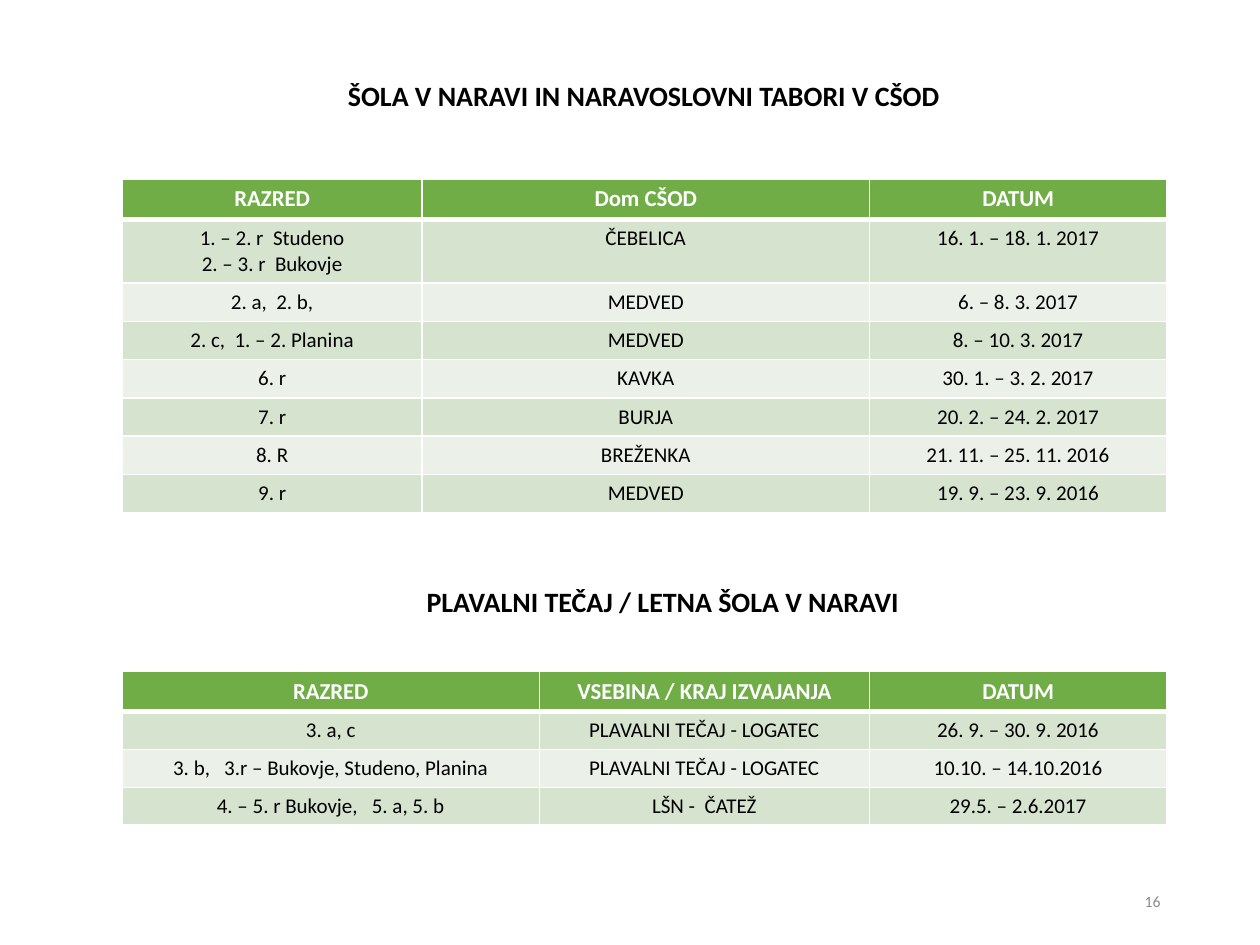
from dataclasses import dataclass

from lxml import etree
from pptx import Presentation
from pptx.dml.color import RGBColor
from pptx.enum.text import MSO_ANCHOR, PP_ALIGN
from pptx.oxml.ns import qn
from pptx.util import Inches, Pt

CENTER, RIGHT = PP_ALIGN.CENTER, PP_ALIGN.RIGHT
TOP, MIDDLE = MSO_ANCHOR.TOP, MSO_ANCHOR.MIDDLE

BLACK = RGBColor(0x00, 0x00, 0x00)
WHITE = RGBColor(0xFF, 0xFF, 0xFF)
GRAY = RGBColor(0x8C, 0x8C, 0x8C)
GREEN = RGBColor(0x70, 0xAD, 0x47)
BANDS = (RGBColor(0xD5, 0xE3, 0xCF), RGBColor(0xEB, 0xF1, 0xE9))

FONT = "Calibri"
TABLE_LEFT = 0.97
LINE_HEIGHT = 0.2
CELL_PADDING = 0.1
THIN, THICK = 1, 3


@dataclass(frozen=True)
class Schedule:
    top: float
    columns: tuple[float, ...]
    header: tuple[str, ...]
    rows: tuple[tuple[str, ...], ...]


CAMPS = Schedule(
    top=1.42,
    columns=(2.38, 3.55, 2.36),
    header=("RAZRED", "Dom CŠOD", "DATUM"),
    rows=(
        ("1. – 2. r  Studeno\n2. – 3. r  Bukovje", "ČEBELICA", "16. 1. – 18. 1. 2017"),
        ("2. a,  2. b,", "MEDVED", "6. – 8. 3. 2017"),
        ("2. c,  1. – 2. Planina", "MEDVED", "8. – 10. 3. 2017"),
        ("6. r", "KAVKA", "30. 1. – 3. 2. 2017"),
        ("7. r", "BURJA", "20. 2. – 24. 2. 2017"),
        ("8. R", "BREŽENKA", "21. 11. – 25. 11. 2016"),
        ("9. r", "MEDVED", "19. 9. – 23. 9. 2016"),
    ),
)

SWIMMING = Schedule(
    top=5.33,
    columns=(3.31, 2.62, 2.36),
    header=("RAZRED", "VSEBINA / KRAJ IZVAJANJA", "DATUM"),
    rows=(
        ("3. a, c", "PLAVALNI TEČAJ - LOGATEC", "26. 9. – 30. 9. 2016"),
        ("3. b,   3.r – Bukovje, Studeno, Planina", "PLAVALNI TEČAJ - LOGATEC", "10.10. – 14.10.2016"),
        ("4. – 5. r Bukovje,   5. a, 5. b", "LŠN -  ČATEŽ", "29.5. – 2.6.2017"),
    ),
)


def write_text(frame, text: str, *, size: float, color: RGBColor = BLACK, bold: bool = False,
               align=CENTER, anchor=None, spacing: float | None = None) -> None:
    frame.word_wrap = True
    if anchor is not None:
        frame.vertical_anchor = anchor
    frame.text = text
    for paragraph in frame.paragraphs:
        paragraph.alignment = align
        paragraph.line_spacing = spacing
        for run in paragraph.runs:
            run.font.name = FONT
            run.font.size = Pt(size)
            run.font.bold = bold
            run.font.color.rgb = color


def place(shape, left: float, top: float, width: float, height: float) -> None:
    shape.left, shape.top = Inches(left), Inches(top)
    shape.width, shape.height = Inches(width), Inches(height)


def add_border(cell, side: str, width: float) -> None:
    properties = cell._tc.get_or_add_tcPr()
    line = etree.SubElement(properties, qn(f"a:ln{side}"), w=str(Pt(width)))
    fill = etree.SubElement(line, qn("a:solidFill"))
    etree.SubElement(fill, qn("a:srgbClr"), val=str(WHITE))


def fill_cell(cell, text: str, row: int) -> None:
    is_header = row == 0
    widths = {"L": THIN, "R": THIN, "T": THICK if row == 1 else THIN, "B": THICK if is_header else THIN}
    for side, width in widths.items():
        add_border(cell, side, width)
    cell.fill.solid()
    cell.fill.fore_color.rgb = GREEN if is_header else BANDS[(row - 1) % 2]
    write_text(cell.text_frame, text, size=13 if is_header else 12,
               color=WHITE if is_header else BLACK, bold=is_header)


def add_schedule(slide, schedule: Schedule) -> None:
    lines = (schedule.header, *schedule.rows)
    heights = [CELL_PADDING + LINE_HEIGHT * max(text.count("\n") + 1 for text in line) for line in lines]
    table = slide.shapes.add_table(
        len(lines), len(schedule.columns), Inches(TABLE_LEFT), Inches(schedule.top),
        Inches(sum(schedule.columns)), Inches(sum(heights))).table
    for column, width in zip(table.columns, schedule.columns):
        column.width = Inches(width)
    for row, (line, height) in enumerate(zip(lines, heights)):
        table.rows[row].height = Inches(height)
        for column, text in enumerate(line):
            fill_cell(table.cell(row, column), text, row)


def main() -> None:
    deck = Presentation()
    deck.slide_width, deck.slide_height = Inches(10), Inches(7.5)
    slide = deck.slides.add_slide(deck.slide_layouts.get_by_name("Title Only"))

    camps_heading = slide.shapes.title
    place(camps_heading, 0.8, 0.6, 8.62, 0.44)
    write_text(camps_heading.text_frame, "ŠOLA V NARAVI IN NARAVOSLOVNI TABORI V CŠOD",
               size=16, bold=True, anchor=TOP, spacing=0.9)
    add_schedule(slide, CAMPS)

    swimming_heading = slide.shapes.add_textbox(Inches(0.95), Inches(4.62), Inches(8.62), Inches(0.44))
    write_text(swimming_heading.text_frame, "PLAVALNI TEČAJ / LETNA ŠOLA V NARAVI",
               size=16, bold=True, anchor=TOP, spacing=0.9)
    add_schedule(slide, SWIMMING)

    page_number = slide.shapes.add_textbox(Inches(7.06), Inches(6.95), Inches(2.25), Inches(0.4))
    write_text(page_number.text_frame, "16", size=9, color=GRAY, align=RIGHT, anchor=MIDDLE)

    deck.save("out.pptx")


if __name__ == "__main__":
    main()
